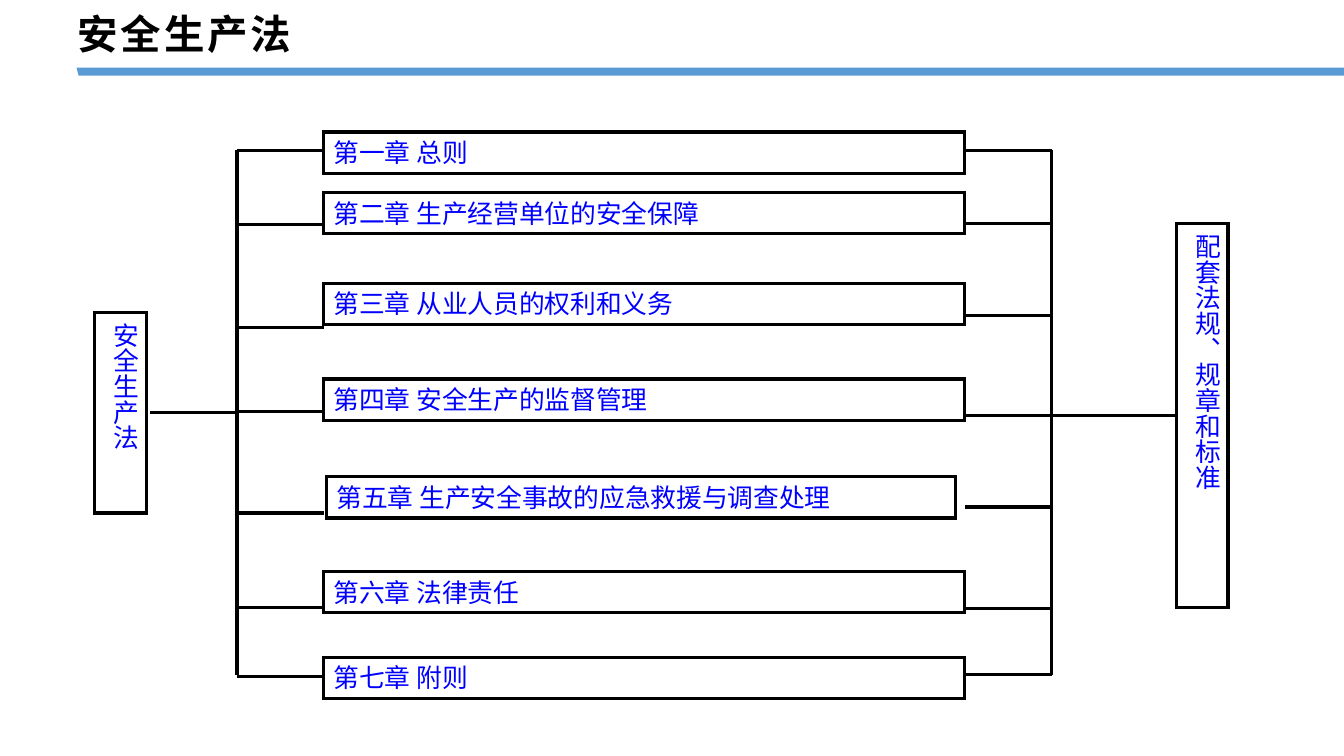
from lxml.etree import SubElement
from pptx import Presentation
from pptx.dml.color import RGBColor
from pptx.enum.shapes import MSO_CONNECTOR as Connector, MSO_SHAPE as Shape
from pptx.enum.text import MSO_ANCHOR as Anchor, PP_ALIGN as Align
from pptx.oxml.ns import qn
from pptx.util import Inches, Pt

BLACK = RGBColor(0x00, 0x00, 0x00)
WHITE = RGBColor(0xFF, 0xFF, 0xFF)
BLUE = RGBColor(0x00, 0x00, 0xFF)
BAR_BLUE = RGBColor(0x5B, 0x9B, 0xD5)

HEADING = "安全生产法"
LAW = ("安全生产法", 0.94, 3.1, 0.51, 1.99)
RULES = ("配套法规、规章和标准", 11.67, 2.22, 0.51, 3.81)
CHAPTER_LEFT, CHAPTER_WIDTH, CHAPTER_HEIGHT = 3.21, 6.36, 0.41
CHAPTERS = [
    ("第一章 总则", 1.31, 1.49, 1.49),
    ("第二章 生产经营单位的安全保障", 1.91, 2.23, 2.22),
    ("第三章 从业人员的权利和义务", 2.81, 3.25, 3.13),
    ("第四章 安全生产的监督管理", 3.76, 4.08, 4.12),
    ("第五章 生产安全事故的应急救援与调查处理", 4.73, 5.09, 5.03),
    ("第六章 法律责任", 5.67, 6.03, 6.04),
    ("第七章 附则", 6.52, 6.71, 6.69),
]
INSET_CHAPTERS = {4: (3.24, 6.24)}
LEFT_SPINE, RIGHT_SPINE = 2.35, 10.43
SPINE_TOP, SPINE_BOTTOM = 1.49, 6.7
LAW_LINK = (1.49, 4.09)
BAR = [(0.76, 0.67), (13.33, 0.67), (13.33, 0.75), (0.78, 0.75)]

LABEL_FONT = {"name": "Noto Sans CJK SC", "size": Pt(18.4)}
TITLE_FONT = {"name": "Arial", "size": Pt(28.9), "bold": True}
LABEL_FRAME = {"vertical_anchor": Anchor.TOP, "word_wrap": True}
TITLE_FRAME = {
    "vertical_anchor": Anchor.MIDDLE, "word_wrap": True,
    "margin_left": Inches(0.07), "margin_right": Inches(0.07),
    "margin_top": Inches(0.03), "margin_bottom": Inches(0.03),
}


def apply(target, values):
    for key, value in values.items():
        setattr(target, key, value)


def write(frame, text, font, color):
    paragraph = frame.paragraphs[0]
    paragraph.alignment = Align.LEFT
    run = paragraph.add_run()
    run.text = text
    apply(run.font, font)
    run.font.color.rgb = color
    properties = run._r.get_or_add_rPr()
    SubElement(properties, qn("a:ea")).set("typeface", font["name"])
    return properties


def draw_stroke(line):
    line.color.rgb = BLACK
    line.width = Pt(2.25)


def add_box(text, left, top, width, height, vertical=False):
    box = slide.shapes.add_shape(Shape.RECTANGLE, *map(Inches, (left, top, width, height)))
    box.shadow.inherit = False
    box.fill.solid()
    box.fill.fore_color.rgb = WHITE
    draw_stroke(box.line)
    SubElement(box.line._get_or_add_ln(), qn("a:miter")).set("lim", "800000")
    frame = box.text_frame
    apply(frame, LABEL_FRAME)
    if vertical:
        frame._txBody.bodyPr.set("vert", "eaVert")
    write(frame, text, LABEL_FONT, BLUE)
    return box


def add_line(x1, y1, x2, y2):
    line = slide.shapes.add_connector(Connector.STRAIGHT, *map(Inches, (x1, y1, x2, y2)))
    draw_stroke(line.line)
    SubElement(line._element.spPr, qn("a:effectLst"))
    return line


prs = Presentation()
prs.slide_width, prs.slide_height = Inches(13.33), Inches(7.5)
slide = prs.slides.add_slide(prs.slide_layouts[5])

title = slide.shapes.title
apply(title, {"left": Inches(0.7), "top": Inches(0.05),
              "width": Inches(2.51), "height": Inches(0.57)})
apply(title.text_frame, TITLE_FRAME)
write(title.text_frame, HEADING, TITLE_FONT, BLACK).set("spc", "200")

outline = slide.shapes.build_freeform(*map(Inches, BAR[0]), scale=1.0)
outline.add_line_segments([(Inches(x), Inches(y)) for x, y in BAR[1:]], close=True)
bar = outline.convert_to_shape()
bar.shadow.inherit = False
bar.fill.solid()
bar.fill.fore_color.rgb = BAR_BLUE
bar.line.fill.background()

add_box(*LAW, vertical=True)
rules = add_box(*RULES, vertical=True)

chapter_right = CHAPTER_LEFT + CHAPTER_WIDTH
for index, (text, top, left_y, right_y) in enumerate(CHAPTERS):
    left, width = INSET_CHAPTERS.get(index, (CHAPTER_LEFT, CHAPTER_WIDTH))
    add_box(text, left, top, width, CHAPTER_HEIGHT)
    add_line(LEFT_SPINE, left_y, CHAPTER_LEFT, left_y)
    add_line(chapter_right, right_y, RIGHT_SPINE, right_y)

for spine in (LEFT_SPINE, RIGHT_SPINE):
    add_line(spine, SPINE_TOP, spine, SPINE_BOTTOM)

law_x, law_y = LAW_LINK
add_line(law_x, law_y, LEFT_SPINE, law_y)
rules_y = RULES[2] + RULES[4] / 2
add_line(RIGHT_SPINE, rules_y, RULES[1], rules_y).end_connect(rules, 1)

prs.save("out.pptx")
